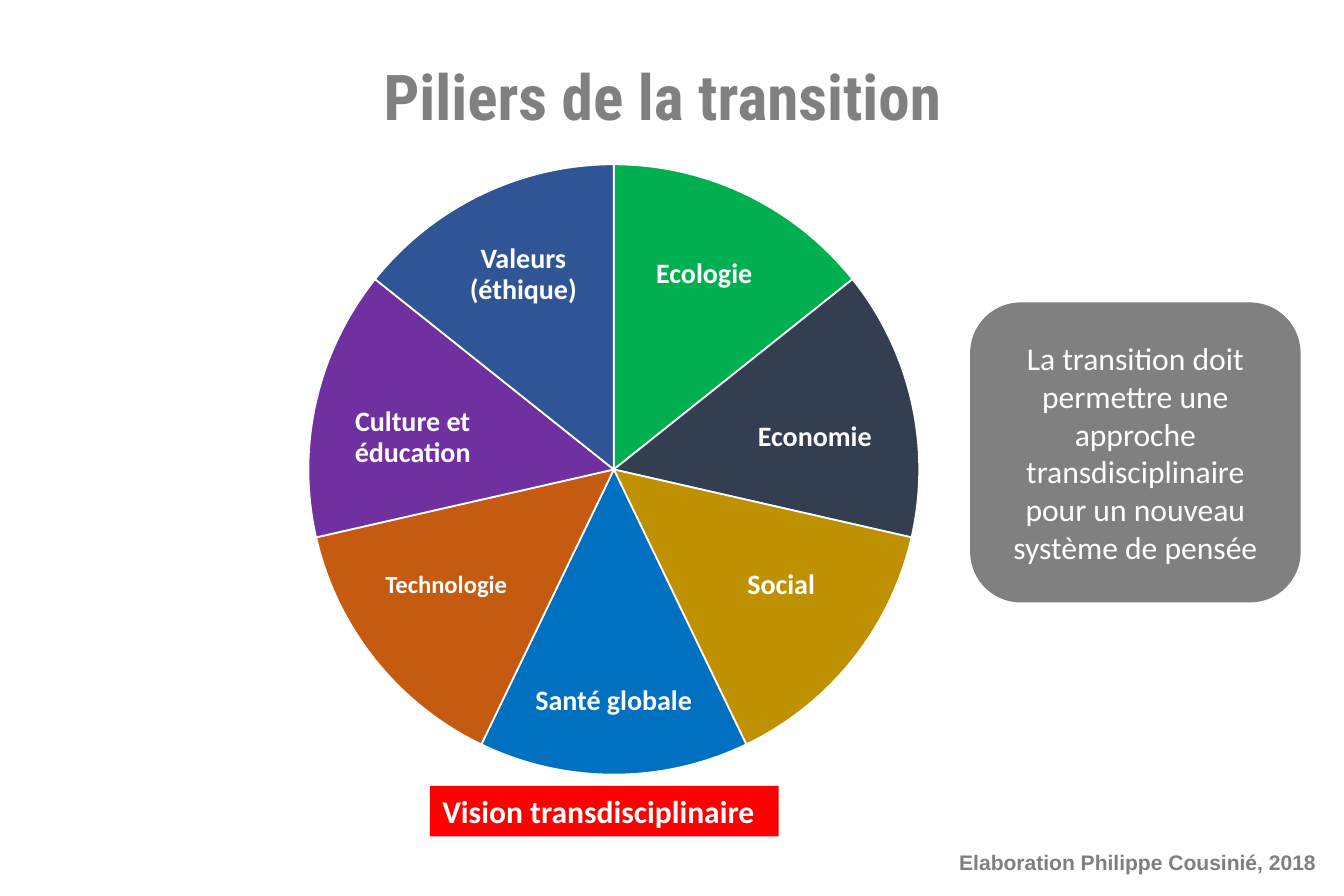
from pptx import Presentation
from pptx.dml.color import RGBColor
from pptx.enum.shapes import MSO_SHAPE
from pptx.enum.text import MSO_ANCHOR, PP_ALIGN
from pptx.util import Inches, Pt

PIE, RECTANGLE, ROUNDED = MSO_SHAPE.PIE, MSO_SHAPE.RECTANGLE, MSO_SHAPE.ROUNDED_RECTANGLE
TOP, MIDDLE, BOTTOM = MSO_ANCHOR.TOP, MSO_ANCHOR.MIDDLE, MSO_ANCHOR.BOTTOM
LEFT, CENTER, RIGHT = PP_ALIGN.LEFT, PP_ALIGN.CENTER, PP_ALIGN.RIGHT

WHITE = RGBColor(0xFF, 0xFF, 0xFF)
GREY = RGBColor(0x80, 0x80, 0x80)
CREDIT_GREY = RGBColor(0x7F, 0x7F, 0x7F)
RED = RGBColor(0xFF, 0x00, 0x00)
GREEN = RGBColor(0x00, 0xB0, 0x50)
SLATE = RGBColor(0x33, 0x3F, 0x50)
GOLD = RGBColor(0xBF, 0x90, 0x00)
BLUE = RGBColor(0x00, 0x70, 0xC0)
ORANGE = RGBColor(0xC5, 0x5A, 0x11)
PURPLE = RGBColor(0x70, 0x30, 0xA0)
NAVY = RGBColor(0x2F, 0x55, 0x97)

WHEEL = (22.95, 18.34, 45.44, 68.12)
WHEEL_CENTER = WHEEL[0] + WHEEL[2] / 2
LABEL_HEIGHT = 12.7
ADJUSTMENT_PER_DEGREE = 0.6

PILLARS = [
    ("Ecologie", GREEN, 6.73, 30.68, 12.42, 16),
    ("Economie", SLATE, 14.96, 48.87, 13.17, 16),
    ("Social", GOLD, 12.46, 65.3, 11.85, 16),
    ("Santé globale", BLUE, 0, 78.28, 12.14, 16),
    ("Technologie", ORANGE, -12.46, 65.3, 11.85, 14),
    ("Culture et éducation", PURPLE, -14.96, 48.87, 13.17, 16),
    ("Valeurs (éthique)", NAVY, -6.73, 30.68, 12.42, 16),
]


class SlideBuilder:
    """Draws styled elements placed by percentages of the slide's size."""

    def __init__(self, presentation):
        self.width = presentation.slide_width
        self.height = presentation.slide_height
        self.font = "Calibri"
        self.slide = presentation.slides.add_slide(presentation.slide_layouts[6])

    def place(self, left, top, width, height):
        return (round(self.width * left / 100), round(self.height * top / 100),
                round(self.width * width / 100), round(self.height * height / 100))

    def shape(self, kind, area, fill, line=None):
        shape = self.slide.shapes.add_shape(kind, *self.place(*area))
        shape.shadow.inherit = False
        shape.fill.solid()
        shape.fill.fore_color.rgb = fill
        if line is None:
            shape.line.fill.background()
        else:
            shape.line.color.rgb = line
            shape.line.width = Pt(1)
        return shape

    def text_box(self, area):
        return self.slide.shapes.add_textbox(*self.place(*area))

    def put_text(self, shape, text, size, color=WHITE, align=CENTER, anchor=MIDDLE,
                 bold=True, font=None, margin=None, spacing=None):
        frame = shape.text_frame
        frame.word_wrap = True
        frame.vertical_anchor = anchor
        if margin is not None:
            frame.margin_left = frame.margin_right = Inches(margin)
            frame.margin_top = frame.margin_bottom = Inches(margin)
        paragraph = frame.paragraphs[0]
        paragraph.text = text
        paragraph.alignment = align
        paragraph.line_spacing = spacing
        paragraph.font.name = font or self.font
        paragraph.font.size = Pt(size)
        paragraph.font.bold = bold
        paragraph.font.color.rgb = color

    def wheel(self, pillars):
        step = 360 / len(pillars)
        for index, (name, color, offset, middle, width, size) in enumerate(pillars):
            start = 270 + index * step
            sector = self.shape(PIE, WHEEL, color, WHITE)
            sector.adjustments[0] = start % 360 * ADJUSTMENT_PER_DEGREE
            sector.adjustments[1] = (start + step) % 360 * ADJUSTMENT_PER_DEGREE
            label = self.text_box((WHEEL_CENTER + offset - width / 2,
                                   middle - LABEL_HEIGHT / 2, width, LABEL_HEIGHT))
            self.put_text(label, name, size, margin=0.02, spacing=0.9)


def main():
    presentation = Presentation()
    presentation.slide_width = Inches(10.63)
    presentation.slide_height = Inches(7.09)
    builder = SlideBuilder(presentation)
    builder.wheel(PILLARS)

    title = builder.text_box((1.88, 5.08, 94.83, 9.73))
    builder.put_text(title, "Piliers de la transition", 36, GREY, anchor=BOTTOM,
                     font="Roboto Condensed", margin=0)

    message = builder.shape(ROUNDED, (72.25, 33.85, 24.46, 33.29), GREY, GREY)
    builder.put_text(message, "La transition doit permettre une approche transdisciplinaire "
                     "pour un nouveau système de pensée", 18, bold=False)

    credit = builder.shape(RECTANGLE, (68.11, 93.37, 30.76, 5.5), WHITE)
    builder.put_text(credit, "Elaboration Philippe Cousinié, 2018", 12, CREDIT_GREY,
                     RIGHT, TOP, font="Arial", margin=0.1)

    vision = builder.shape(RECTANGLE, (31.98, 87.73, 25.96, 5.64), RED)
    builder.put_text(vision, "Vision transdisciplinaire", 18, align=LEFT, anchor=TOP)

    presentation.save("out.pptx")


if __name__ == "__main__":
    main()
